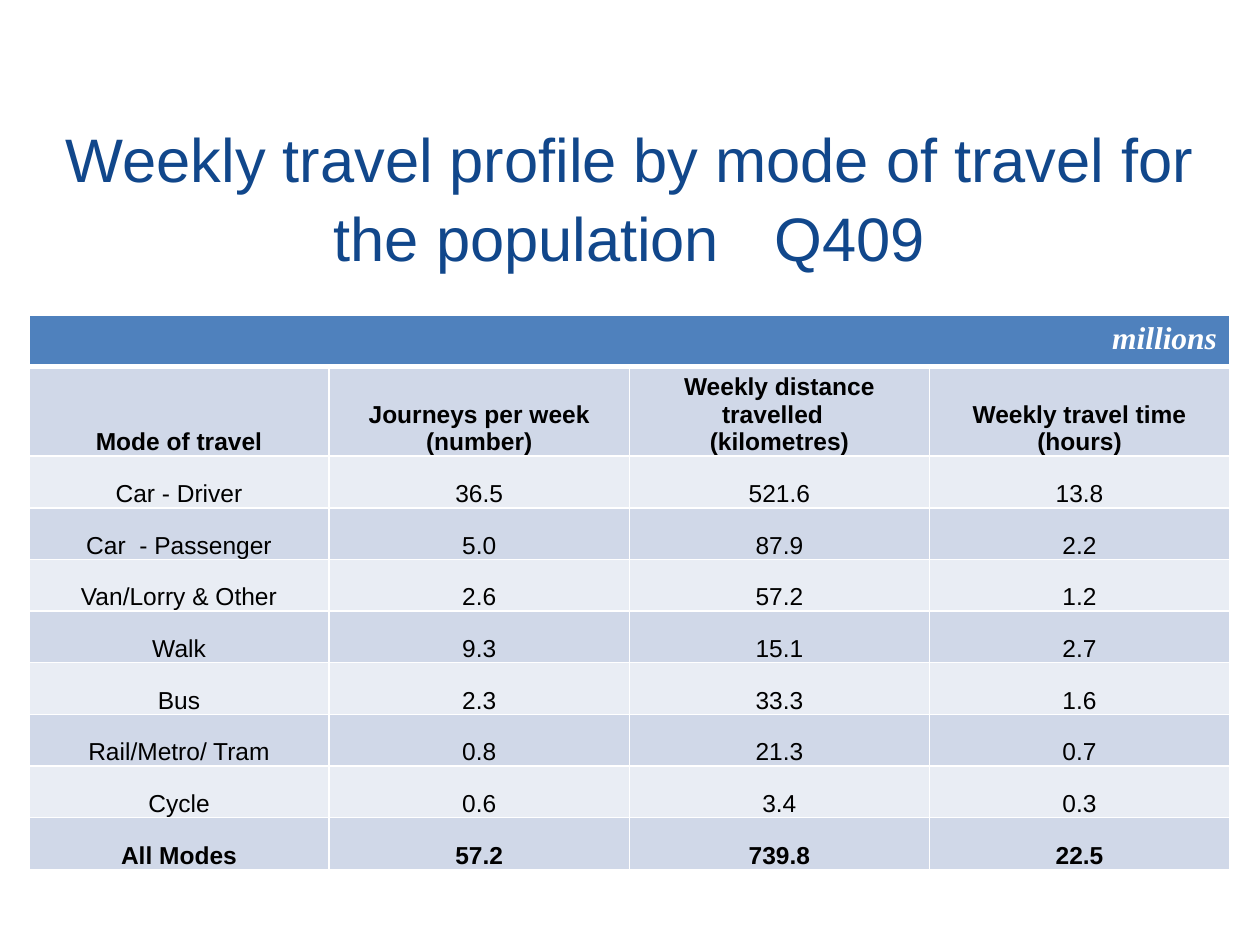
import dataclasses
import pptx
import pptx.dml.color
import pptx.enum.text
import pptx.oxml
import pptx.util
from pptx.oxml.ns import nsdecls

Inches, Pt = pptx.util.Inches, pptx.util.Pt
Align, Anchor = pptx.enum.text.PP_ALIGN, pptx.enum.text.MSO_ANCHOR


@dataclasses.dataclass(frozen=True)
class Theme:
    title: str = "11478B"
    head: str = "4F81BD"
    bands: tuple = ("D0D8E8", "E9EDF4")
    white: str = "FFFFFF"
    black: str = "000000"
    sans: str = "Arial"
    serif: str = "Times New Roman"
    big: float = 35.1
    unit: float = 18
    body: float = 14


@dataclasses.dataclass(frozen=True)
class Style:
    font: str
    size: float
    color: str
    align: Align
    bold: bool = False
    italic: bool = False


@dataclasses.dataclass(frozen=True)
class Mode:
    name: str
    trips: str
    dist: str
    time: str
    bold: bool = False


THEME = Theme()
WIDE, HIGH = 10, 7.5
LEFT, SPAN = 0.23, 9.53
ROW = 0.41

MODES = [
    Mode("Mode of travel", "Journeys per week (number)",
         "Weekly distance travelled  \n(kilometres)",
         "Weekly travel time (hours)", True),
    Mode("Car - Driver", "36.5", "521.6", "13.8"),
    Mode("Car  - Passenger", "5.0", "87.9", "2.2"),
    Mode("Van/Lorry & Other", "2.6", "57.2", "1.2"),
    Mode("Walk", "9.3", "15.1", "2.7"),
    Mode("Bus", "2.3", "33.3", "1.6"),
    Mode("Rail/Metro/ Tram", "0.8", "21.3", "0.7"),
    Mode("Cycle", "0.6", "3.4", "0.3"),
    Mode("All Modes", "57.2", "739.8", "22.5", True),
]


def rgb(code: str):
    return pptx.dml.color.RGBColor.from_string(code)


def write(frame, text: str, style: Style) -> None:
    frame.text = text
    for par in frame.paragraphs:
        par.alignment = style.align
        font = par.font
        font.name, font.size = style.font, Pt(style.size)
        font.bold, font.italic = style.bold, style.italic
        font.color.rgb = rgb(style.color)


def paint(cell, color: str, top: float = 1, base: float = 1) -> None:
    """Fill a cell and rule its four sides; top and base are in points."""
    props = cell._tc.get_or_add_tcPr()
    for side, width in zip("LRTB", (1, 1, top, base)):
        props.append(pptx.oxml.parse_xml(
            f'<a:ln{side} {nsdecls("a")} w="{Pt(width)}"><a:solidFill>'
            f'<a:srgbClr val="{THEME.white}"/></a:solidFill></a:ln{side}>'))
    cell.fill.solid()
    cell.fill.fore_color.rgb = rgb(color)


def add_title(slide) -> None:
    box = slide.shapes.add_textbox(
        Inches(LEFT), Inches(0.92), Inches(SPAN), Inches(1.26))
    frame = box.text_frame
    frame.word_wrap = True
    frame.vertical_anchor = Anchor.MIDDLE
    write(frame,
          "Weekly travel profile by mode of travel for the population \tQ409",
          Style(THEME.sans, THEME.big, THEME.title, Align.CENTER))
    frame.paragraphs[0].line_spacing = 1.06


def add_modes(slide) -> None:
    rows, cols = len(MODES) + 1, 4
    table = slide.shapes.add_table(
        rows, cols, Inches(LEFT), Inches(HIGH / 3),
        Inches(SPAN), Inches(ROW * rows)).table
    for row in table.rows:
        row.height = Inches(ROW)

    for col in range(cols):
        paint(table.cell(0, col), THEME.head, base=3)
    unit = table.cell(0, 0)
    unit.merge(table.cell(0, cols - 1))
    write(unit.text_frame, "millions",
          Style(THEME.serif, THEME.unit, THEME.white, Align.RIGHT, True, True))

    for num, mode in enumerate(MODES):
        style = Style(THEME.sans, THEME.body, THEME.black, Align.CENTER,
                      mode.bold)
        texts = (mode.name, mode.trips, mode.dist, mode.time)
        for col, text in enumerate(texts):
            cell = table.cell(num + 1, col)
            paint(cell, THEME.bands[num % 2], top=1 if num else 3)
            cell.vertical_anchor = Anchor.BOTTOM
            cell.margin_left = cell.margin_right = Inches(0.01)
            cell.margin_top, cell.margin_bottom = Inches(0.01), 0
            write(cell.text_frame, text, style)


def main() -> None:
    deck = pptx.Presentation()
    deck.slide_width, deck.slide_height = Inches(WIDE), Inches(HIGH)
    slide = deck.slides.add_slide(deck.slide_layouts[6])
    add_title(slide)
    add_modes(slide)
    deck.save("out.pptx")


if __name__ == "__main__":
    main()
